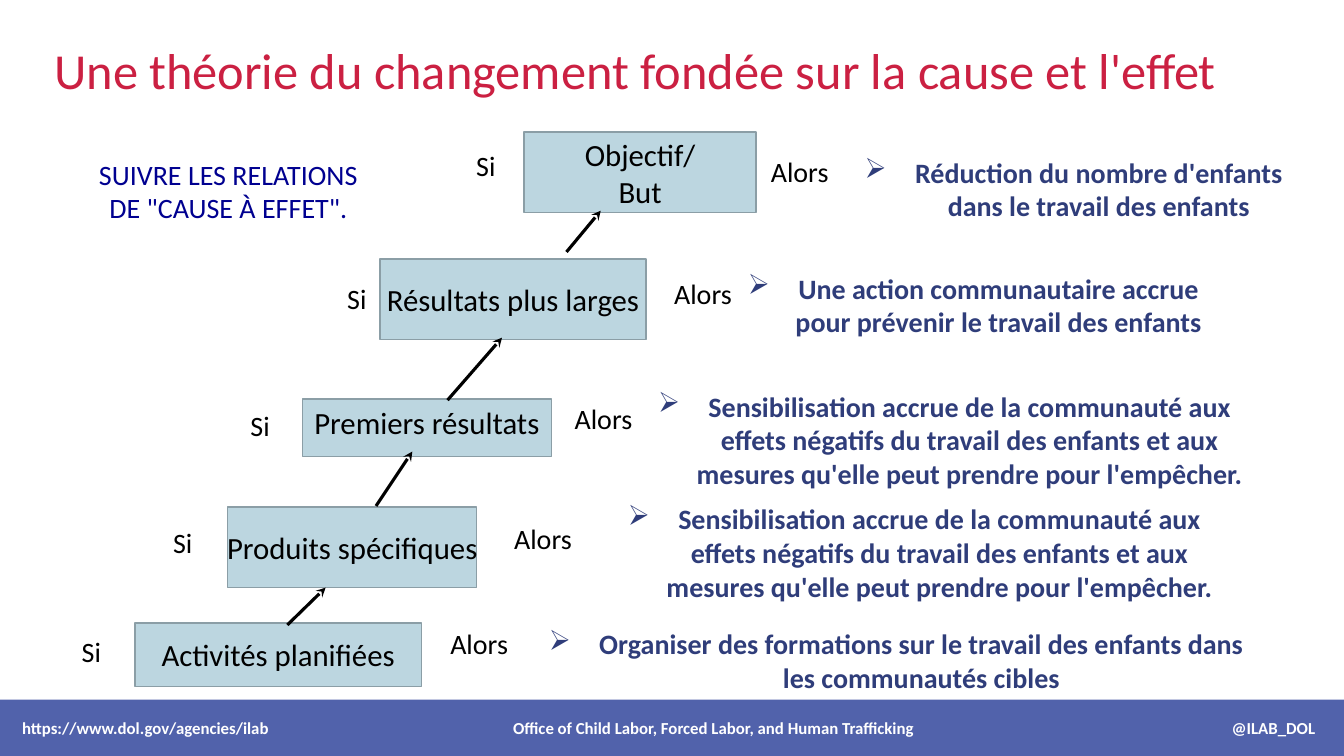
import pptx
import pptx.dml.color
import pptx.enum.shapes
import pptx.enum.text
import pptx.oxml
import pptx.oxml.ns
import pptx.util

PP = pptx.enum.text.PP_ALIGN
MSO = pptx.enum.text.MSO_ANCHOR
SHAPE = pptx.enum.shapes.MSO_SHAPE
LINE = pptx.enum.shapes.MSO_CONNECTOR.STRAIGHT


def rgb(value):
    return pptx.dml.color.RGBColor.from_string(value)


def element(tag, attrs=""):
    return pptx.oxml.parse_xml(f"<a:{tag} {pptx.oxml.ns.nsdecls('a')} {attrs}/>")


class Deck:
    FONT = "Calibri"
    STYLES = {
        "title": {"size": 36, "color": "CB2042"},
        "note": {"size": 20, "color": "000090"},
        "label": {"size": 20, "color": "000000"},
        "level": {"size": 22, "color": "000000"},
        "effect": {"size": 20, "color": "2F3D7A", "bold": True},
        "footer": {"size": 12, "color": "FFFFFF", "bold": True},
    }

    def __init__(self, width, height):
        self.prs = pptx.Presentation()
        self.prs.slide_width = pptx.util.Inches(width)
        self.prs.slide_height = pptx.util.Inches(height)
        self.s = self.prs.slides.add_slide(self.prs.slide_layouts[6])

    def place(self, x, y, w, h):
        width, height = self.prs.slide_width, self.prs.slide_height
        return [round(share * size / 100) for share, size in
                zip((x, y, w, h), (width, height, width, height))]

    def set_text(self, sp, text, style, align=PP.CENTER, anchor=MSO.TOP, wrap=True):
        tf = sp.text_frame
        for name, value in {"word_wrap": wrap, "vertical_anchor": anchor}.items():
            setattr(tf, name, value)
        look = self.STYLES[style]
        values = {"name": self.FONT, "size": pptx.util.Pt(look["size"]),
                  "bold": look.get("bold", False)}
        for i, line in enumerate(text.split("\n")):
            p = tf.add_paragraph() if i else tf.paragraphs[0]
            p.alignment = align
            r = p.add_run()
            r.text = line
            for name, value in values.items():
                setattr(r.font, name, value)
            r.font.color.rgb = rgb(look["color"])
        return tf

    def text(self, box, text, style, **options):
        sp = self.s.shapes.add_textbox(*self.place(*box))
        return self.set_text(sp, text, style, **options)

    def label(self, center, top, text):
        self.text((center - 4, top, 8, 5.87), text, "label")

    def rect(self, box, fill, line=None):
        sp = self.s.shapes.add_shape(SHAPE.RECTANGLE, *self.place(*box))
        sp.shadow.inherit = False
        sp.fill.solid()
        sp.fill.fore_color.rgb = rgb(fill)
        if line:
            sp.line.color.rgb = rgb(line)
            sp.line.width = pptx.util.Pt(1)
        else:
            sp.line.fill.background()
        return sp

    def level(self, box, text, anchor):
        self.set_text(self.rect(box, "BCD6E0", "8B9EA6"), text, "level",
                      anchor=anchor, wrap=False)

    def bullet(self, box, text):
        tf = self.text(box, text, "effect")
        pPr = tf.paragraphs[0]._p.get_or_add_pPr()
        indent = pptx.util.Inches(0.5)
        pPr.set("marL", str(indent))
        pPr.set("indent", str(-indent))
        pPr.append(element("buChar", 'char="➢"'))

    def arrow(self, *ends):
        sp = self.s.shapes.add_connector(LINE, *self.place(*ends))
        sp.line.color.rgb = rgb("000000")
        sp.line.width = pptx.util.Pt(2.25)
        sp.line._get_or_add_ln().append(element("tailEnd", 'type="stealth"'))
        sp._element.spPr.append(element("effectLst"))

    def band(self, box, fill, opacity):
        sp = self.rect(box, fill)
        color = sp._element.spPr.find(pptx.oxml.ns.qn("a:solidFill"))[0]
        color.append(element("alpha", f'val="{opacity * 1000}"'))


AWARENESS = ("Sensibilisation accrue de la communauté aux effets négatifs du travail "
             "des enfants et aux mesures qu'elle peut prendre pour l'empêcher.")

LEVELS = [
    ("Activités planifiées", (10.05, 82.4, 21.3, 8.4), MSO.MIDDLE,
     (6.8, 83.33), (35.65, 82.27), (39.08, 82.27, 55.2, 10.27),
     "Organiser des formations sur le travail des enfants dans les communautés cibles"),
    ("Produits spécifiques", (16.95, 67.07, 18.53, 10.67), MSO.MIDDLE,
     (13.6, 68.8), (40.4, 68.27), (43.35, 65.73, 49.35, 14.8), AWARENESS),
    ("Premiers résultats", (22.5, 52.8, 18.53, 7.6), MSO.TOP,
     (19.35, 53.33), (44.9, 52.4), (46.8, 50.8, 46.95, 14.8), AWARENESS),
    ("Résultats plus larges", (28.28, 34.27, 19.8, 10.67), MSO.MIDDLE,
     (26.55, 36.53), (52.3, 35.87), (53.33, 35.2, 38.18, 10.27),
     "Une action communautaire accrue pour prévenir le travail des enfants"),
    ("Objectif/\nBut", (39, 17.47, 17.25, 10.67), MSO.MIDDLE,
     (36.15, 18.93), (59.5, 19.73), (63.08, 19.87, 33.6, 10.27),
     "Réduction du nombre d'enfants dans le travail des enfants"),
]

ARROWS = [
    (21.38, 82.67, 24.23, 77.73),
    (27.98, 66.93, 30.68, 59.73),
    (33.3, 52.93, 37.35, 44.67),
    (42.15, 33.33, 44.7, 27.87),
]

FOOTER = [
    (0.9, 30, "https://www.dol.gov/agencies/ilab", PP.LEFT),
    (33.1, 40, "Office of Child Labor, Forced Labor, and Human Trafficking", PP.CENTER),
    (78.6, 20, "@ILAB_DOL", PP.RIGHT),
]


def main():
    deck = Deck(13.33, 7.5)
    deck.text((3.3, 5.07, 93.1, 8.27), "Une théorie du changement fondée sur la cause et l'effet",
              "title", align=PP.LEFT, anchor=MSO.MIDDLE)
    deck.text((6.38, 20.13, 21.23, 10.27), "SUIVRE LES RELATIONS DE \"CAUSE À EFFET\".", "note")
    for name, box, anchor, si, alors, effect_box, effect in LEVELS:
        deck.level(box, name, anchor)
        deck.label(*si, "Si")
        deck.label(*alors, "Alors")
        deck.bullet(effect_box, effect)
    for ends in ARROWS:
        deck.arrow(*ends)
    deck.band((0, 92.53, 100, 7.47), "3F51A2", 90)
    for x, width, text, align in FOOTER:
        tf = deck.text((x, 92.53, width, 7.47), text, "footer", align=align, anchor=MSO.MIDDLE)
        for side in ("margin_left", "margin_right"):
            setattr(tf, side, pptx.util.Inches(0.1))
    deck.prs.save("out.pptx")


if __name__ == "__main__":
    main()
